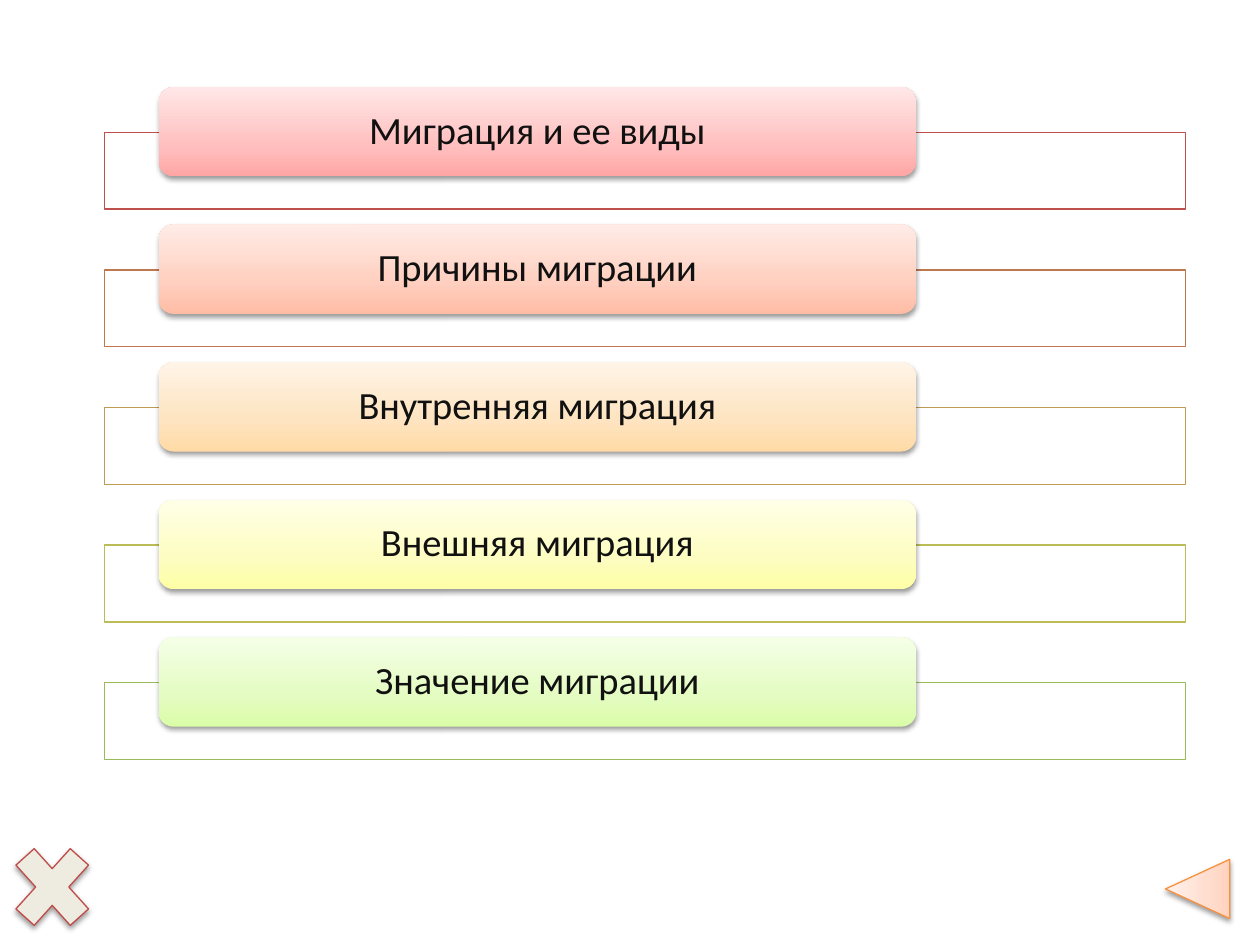
"""Build a slide that lists five migration topics."""
from copy import deepcopy

from lxml.etree import SubElement
from pptx import Presentation
from pptx.dml.color import RGBColor
from pptx.enum.shapes import MSO_SHAPE
from pptx.enum.text import MSO_ANCHOR, PP_ALIGN
from pptx.oxml.ns import qn
from pptx.util import Inches, Pt

WHITE = RGBColor(0xFF, 0xFF, 0xFF)
TEXT = RGBColor(0x11, 0x11, 0x11)
CREAM = RGBColor(0xEE, 0xEC, 0xE1)
RED = RGBColor(0xBF, 0x4C, 0x48)
ORANGE = RGBColor(0xF6, 0x92, 0x40)
PEACH = (RGBColor(0xFF, 0xD2, 0xBD), RGBColor(0xFF, 0xDE, 0xD0), RGBColor(0xFF, 0xF2, 0xED))
TOPICS = [
    ("Миграция и ее виды", RGBColor(0xC0, 0x50, 0x4D),
     (RGBColor(0xFF, 0xA6, 0xA5), RGBColor(0xFF, 0xC0, 0xBF), RGBColor(0xFF, 0xE7, 0xE7))),
    ("Причины миграции", RGBColor(0xBF, 0x77, 0x50),
     (RGBColor(0xFF, 0xBC, 0xA5), RGBColor(0xFF, 0xCF, 0xBF), RGBColor(0xFF, 0xEC, 0xE7))),
    ("Внутренняя миграция", RGBColor(0xBD, 0x9B, 0x53),
     (RGBColor(0xFF, 0xDA, 0xA5), RGBColor(0xFE, 0xE4, 0xC0), RGBColor(0xFF, 0xF4, 0xE7))),
    ("Внешняя миграция", RGBColor(0xBC, 0xBC, 0x56),
     (RGBColor(0xFE, 0xFE, 0xA6), RGBColor(0xFD, 0xFD, 0xC1), RGBColor(0xFF, 0xFF, 0xE7))),
    ("Значение миграции", RGBColor(0x9B, 0xBB, 0x59),
     (RGBColor(0xDA, 0xFD, 0xA7), RGBColor(0xE4, 0xFC, 0xC2), RGBColor(0xF5, 0xFF, 0xE7))),
]
FIRST_TOP, PITCH = 0.69, 1.092


def add_shape(s, kind, left, top, width, height, line=None):
    """Add a shape without shadow, outlined only if a line colour is given."""
    sp = s.shapes.add_shape(kind, Inches(left), Inches(top), Inches(width), Inches(height))
    sp.shadow.inherit = False
    if line is None:
        sp.line.fill.background()
    else:
        sp.line.color.rgb = line
        sp.line.width = Pt(0.75)
    return sp


def fill_solid(sp, color, alpha=100):
    """Fill a shape with one colour at the given opacity in percent."""
    sp.fill.solid()
    sp.fill.fore_color.rgb = color
    if alpha < 100:
        clr = sp.element.spPr.find(qn("a:solidFill")).find(qn("a:srgbClr"))
        SubElement(clr, qn("a:alpha"), val=str(alpha * 1000))


def fill_gradient(sp, colors):
    """Fill a shape with a three-colour gradient rising from the bottom."""
    sp.fill.gradient()
    sp.fill.gradient_angle = 90
    stop_list = sp.element.spPr.find(qn("a:gradFill")).find(qn("a:gsLst"))
    stop_list.insert(1, deepcopy(stop_list[0]))
    for stop, color, position in zip(sp.fill.gradient_stops, colors, (0, 0.35, 1)):
        stop.color.rgb = color
        stop.position = position


def add_shadow(sp):
    """Give a shape a soft shadow below it."""
    effects = sp.element.spPr.find(qn("a:effectLst"))
    shadow = SubElement(effects, qn("a:outerShdw"), blurRad=str(Pt(3.1)), dist=str(Pt(1.6)),
                        dir="5400000", rotWithShape="0")
    clr = SubElement(shadow, qn("a:srgbClr"), val="000000")
    SubElement(clr, qn("a:alpha"), val="38000")


def set_label(sp, text):
    """Write a centred label in a shape."""
    tf = sp.text_frame
    tf.text = text
    tf.word_wrap = True
    tf.vertical_anchor = MSO_ANCHOR.MIDDLE
    tf.margin_left = tf.margin_right = Inches(0.26)
    tf.margin_top = tf.margin_bottom = 0
    p = tf.paragraphs[0]
    p.alignment = PP_ALIGN.CENTER
    p.line_spacing = 0.9
    font = p.runs[0].font
    font.name = "Calibri"
    font.size = Pt(22)
    font.color.rgb = TEXT


def add_topic(s, top, text, line, colors):
    """Add a topic: an outlined frame with a labelled bar over it."""
    frame = add_shape(s, MSO_SHAPE.RECTANGLE, 0.83, top + 0.36, 8.58, 0.61, line)
    fill_solid(frame, WHITE, 90)
    bar = add_shape(s, MSO_SHAPE.ROUNDED_RECTANGLE, 1.26, top, 6.01, 0.71)
    fill_gradient(bar, colors)
    add_shadow(bar)
    set_label(bar, text)


def add_buttons(s):
    """Add the close and back buttons."""
    close = add_shape(s, MSO_SHAPE.MATH_MULTIPLY, 0, 6.58, 0.83, 0.92, RED)
    fill_solid(close, CREAM)
    add_shadow(close)
    back = add_shape(s, MSO_SHAPE.ISOSCELES_TRIANGLE, 9.27, 6.8, 0.47, 0.51, ORANGE)
    back.rotation = 270
    fill_gradient(back, PEACH)
    add_shadow(back)


def main():
    """Build and save the slide."""
    prs = Presentation()
    prs.slide_width, prs.slide_height = Inches(10), Inches(7.5)
    s = prs.slides.add_slide(prs.slide_layouts[6])
    add_buttons(s)
    for i, (text, line, colors) in enumerate(TOPICS):
        add_topic(s, FIRST_TOP + i * PITCH, text, line, colors)
    prs.save("out.pptx")


if __name__ == "__main__":
    main()
